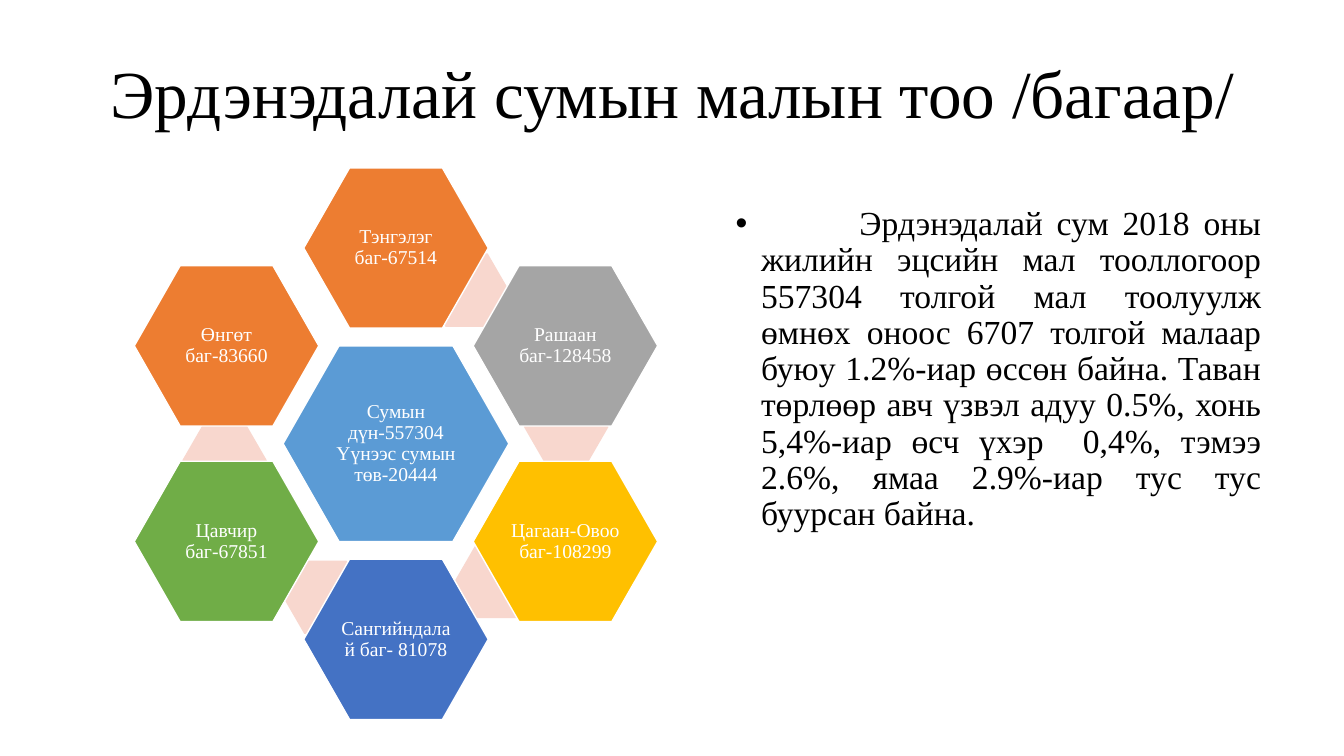
from math import cos, radians, sin

from lxml.etree import SubElement
from pptx import Presentation
from pptx.dml.color import RGBColor
from pptx.enum.shapes import MSO_SHAPE
from pptx.enum.text import MSO_ANCHOR, MSO_AUTO_SIZE, PP_ALIGN
from pptx.oxml.ns import qn
from pptx.util import Cm, Pt

FONT = "Times New Roman"
BLACK = RGBColor(0x00, 0x00, 0x00)
WHITE = RGBColor(0xFF, 0xFF, 0xFF)
BLUE = RGBColor(0x5B, 0x9B, 0xD5)
ORANGE = RGBColor(0xED, 0x7D, 0x31)
GREY = RGBColor(0xA5, 0xA5, 0xA5)
GOLD = RGBColor(0xFF, 0xC0, 0x00)
NAVY = RGBColor(0x44, 0x72, 0xC4)
GREEN = RGBColor(0x70, 0xAD, 0x47)
PINK = RGBColor(0xF8, 0xD7, 0xCE)

TITLE = "Эрдэнэдалай сумын малын тоо /багаар/"
TOTAL = "Сумын дүн-557304 Үүнээс сумын төв-20444"
# Label, fill and centre of the pale link behind, in cm from the middle
BAGS = [
    ("Тэнгэлэг баг-67514", ORANGE, (1.78, -3.87)),
    ("Рашаан баг-128458", GREY, (4.29, -0.42)),
    ("Цагаан-Овоо баг-108299", GOLD, (2.54, 3.47)),
    ("Сангийндалай баг- 81078", NAVY, (-1.78, 3.87)),
    ("Цавчир баг-67851", GREEN, (-4.32, 0.42)),
    ("Өнгөт баг-83660", ORANGE, None),
]
BODY = (
    "Эрдэнэдалай сум 2018 оны жилийн эцсийн мал тооллогоор 557304 толгой мал "
    "тоолуулж өмнөх оноос 6707 толгой малаар буюу 1.2%-иар өссөн байна. Таван "
    "төрлөөр авч үзвэл адуу 0.5%, хонь 5,4%-иар өсч үхэр  0,4%, тэмээ 2.6%, "
    "ямаа 2.9%-иар тус тус буурсан байна."
)


def put(item, values):
    for name, value in values.items():
        setattr(item, name, value)


def write(frame, text, size, color, align, **format):
    """Fill a frame with one paragraph; format goes to the frame."""
    put(frame, dict(word_wrap=True, **format))
    para = frame.paragraphs[0]
    put(para, {"alignment": align, "line_spacing": 0.9})
    run = para.add_run()
    run.text = text
    put(run.font, {"name": FONT, "size": Pt(size)})
    run.font.color.rgb = color
    return para


def add_title(slide, left, top, width, height):
    title = slide.shapes.title
    put(title, {"left": left, "top": top, "width": width, "height": height})
    write(title.text_frame, TITLE, 48, BLACK, PP_ALIGN.CENTER,
          vertical_anchor=MSO_ANCHOR.MIDDLE, auto_size=MSO_AUTO_SIZE.NONE)


def add_hex(slide, x, y, width, height, fill, label=None):
    """Draw a hexagon centred on x, y; one with a label gets a white edge."""
    shape = slide.shapes.add_shape(MSO_SHAPE.HEXAGON, x - width // 2,
                                   y - height // 2, width, height)
    shape.shadow.inherit = False
    shape.adjustments[0] = 0.286 if label else 0.289
    shape.adjustments[1] = 1.155
    shape.fill.solid()
    shape.fill.fore_color.rgb = fill
    if not label:
        shape.line.fill.background()
        return
    shape.line.color.rgb = WHITE
    shape.line.width = Pt(1)
    sides = ("left", "top", "right", "bottom")
    write(shape.text_frame, label, 14, WHITE, PP_ALIGN.CENTER,
          vertical_anchor=MSO_ANCHOR.MIDDLE,
          **{f"margin_{side}": Cm(0.05) for side in sides})


def add_ring(slide, left, top, width, height):
    x, y = left + width // 2, top + height // 2
    reach = Cm(4.93)
    add_hex(slide, x, y, Cm(5.69), Cm(4.93), BLUE, TOTAL)
    for step, (label, fill, link) in enumerate(BAGS):
        if link:
            add_hex(slide, x + Cm(link[0]), y + Cm(link[1]),
                    Cm(2.13), Cm(1.85), PINK)
        turn = radians(60 * step)
        add_hex(slide, x + round(reach * sin(turn)),
                y - round(reach * cos(turn)), Cm(4.65), Cm(4.04), fill, label)


def add_body(slide, left, top, width, height):
    """Place the bulleted text; a tab stop makes its first-line gap."""
    box = slide.shapes.add_textbox(left, top, width, height)
    para = write(box.text_frame, "\t" + BODY, 24, BLACK, PP_ALIGN.JUSTIFY)
    para.space_before = Pt(10)
    props = para._p.get_or_add_pPr()
    props.set("marL", str(Cm(0.64)))
    props.set("indent", str(-Cm(0.64)))
    SubElement(props, qn("a:buFont"), typeface="Arial")
    SubElement(props, qn("a:buChar"), char="•")
    tabs = SubElement(props, qn("a:tabLst"))
    SubElement(tabs, qn("a:tab"), pos=str(Cm(3.12)), algn="l")


def main():
    deck = Presentation()
    put(deck, {"slide_width": Cm(33.87), "slide_height": Cm(19.05)})
    slide = deck.slides.add_slide(deck.slide_layouts[5])
    add_title(slide, Cm(1.88), Cm(1.3), Cm(30.15), Cm(2.26))
    add_ring(slide, Cm(3.38), Cm(4.24), Cm(13.2), Cm(13.88))
    add_body(slide, Cm(18.29), Cm(5.08), Cm(13.74), Cm(12.62))
    deck.save("out.pptx")


if __name__ == "__main__":
    main()
